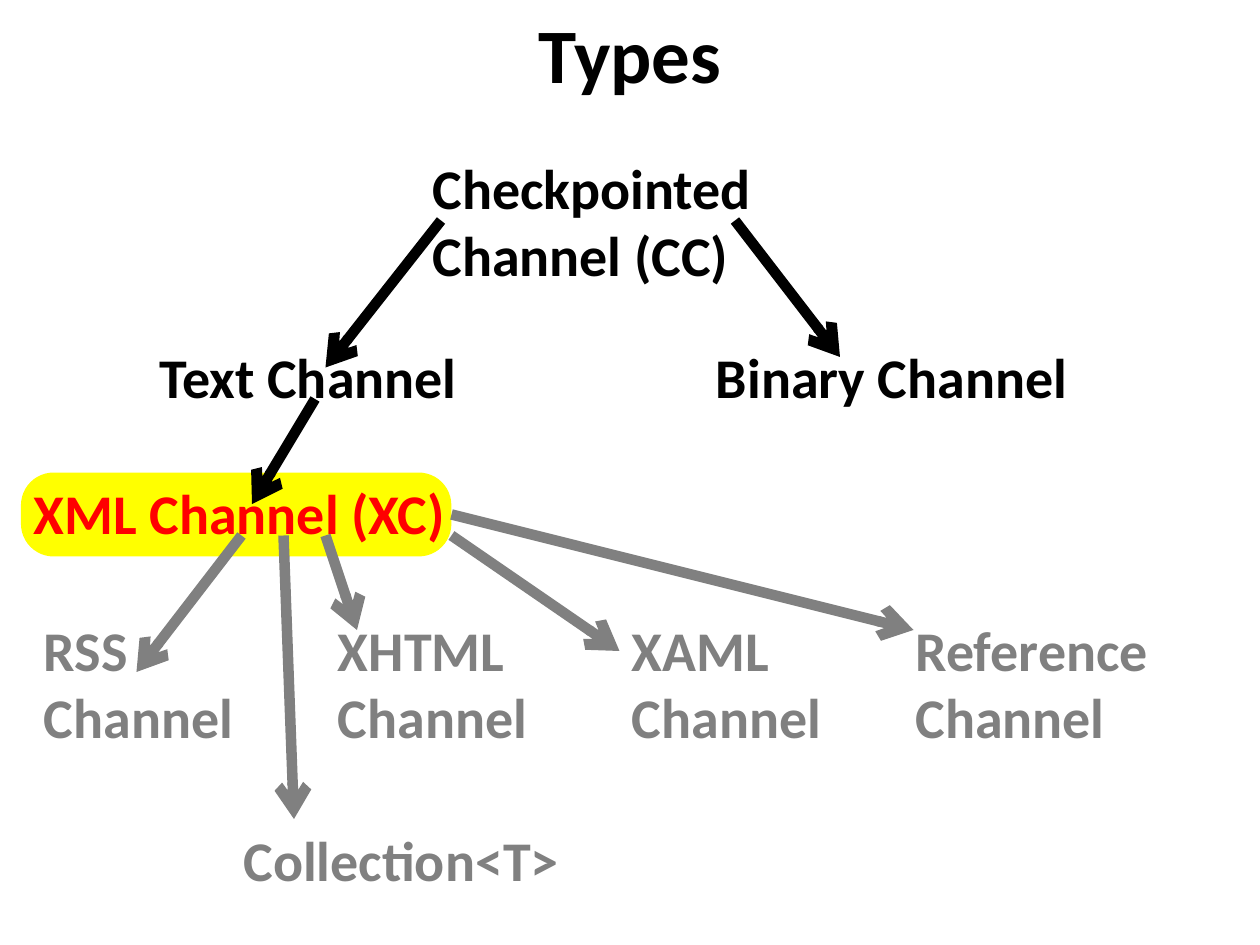
from lxml import etree
from pptx import Presentation
from pptx.dml.color import RGBColor
from pptx.enum.shapes import MSO_CONNECTOR, MSO_SHAPE
from pptx.enum.text import MSO_ANCHOR, MSO_AUTO_SIZE, PP_ALIGN
from pptx.oxml.ns import qn
from pptx.util import Pt

LINE = MSO_CONNECTOR.STRAIGHT
ROUND = MSO_SHAPE.ROUNDED_RECTANGLE
TOP = MSO_ANCHOR.TOP
FIXED = MSO_AUTO_SIZE.NONE
LEFT, CENTER = PP_ALIGN.LEFT, PP_ALIGN.CENTER

FONT = "Calibri"
BLACK, GRAY, RED, YELLOW = "000000", "808080", "FF0000", "FFFF00"
ROW = 48  # height of a one-line label

# Labels: text, left, top, width, height, relative to the tree
MAIN = [
    ("Checkpointed Channel (CC)", 240, 0, 198, 90),
    ("Text Channel", 84, 108, 198, ROW),
    ("Binary Channel", 402, 108, 234, ROW),
]
FOCUS = ("XML Channel (XC)", 12, 186, 264, ROW)
LEAVES = [
    ("RSS Channel", 18, 264, 126, ROW),
    ("XHTML Channel", 186, 264, 132, ROW),
    ("XAML Channel", 354, 264, 132, ROW),
    ("Reference Channel", 516, 264, 192, ROW),
    ("Collection<T>", 132, 384, 198, ROW),
]

# Arrows from parent to child: x1, y1, x2, y2, relative to the tree
MAIN_ARROWS = [
    (252, 42, 186, 126),
    (420, 42, 480, 120),
    (180, 144, 144, 204),
]
LEAF_ARROWS = [
    (138, 222, 78, 300),
    (186, 222, 204, 276),
    (258, 222, 354, 288),
    (258, 210, 522, 276),
    (162, 222, 168, 384),
]


def rgb(code):
    return RGBColor.from_string(code)


def write(shape, text, size, color, align=LEFT):
    frame = shape.text_frame
    frame.text = text
    frame.word_wrap = True
    frame.auto_size = FIXED
    frame.vertical_anchor = TOP
    for para in frame.paragraphs:
        para.alignment = align
        for run in para.runs:
            font = run.font
            font.name, font.size, font.bold = FONT, Pt(size), True
            font.color.rgb = rgb(color)


def add_title(slide, x, y, w, h):
    title = slide.shapes.title
    title.left, title.top, title.width, title.height = map(Pt, (x, y, w, h))
    write(title, "Types", 44, BLACK, CENTER)


def add_label(slide, x, y, item, color):
    text, dx, dy, w, h = item
    box = slide.shapes.add_textbox(Pt(x + dx), Pt(y + dy), Pt(w), Pt(h))
    write(box, text, 32, color)


def add_arrow(slide, x, y, ends, color):
    x1, y1, x2, y2 = ends
    arrow = slide.shapes.add_connector(
        LINE, Pt(x + x1), Pt(y + y1), Pt(x + x2), Pt(y + y2))
    arrow.line.width = Pt(6)
    arrow.line.color.rgb = rgb(color)
    props = arrow.line._get_or_add_ln()
    etree.SubElement(props, qn("a:tailEnd"), type="arrow")
    etree.SubElement(arrow._element.spPr, qn("a:effectLst"))


def add_tree(slide, x, y):
    # Highlight behind the XML channel
    _, dx, dy, w, h = FOCUS
    mark = slide.shapes.add_shape(
        ROUND, Pt(x + dx), Pt(y + dy), Pt(w - 18), Pt(h))
    mark.adjustments[0] = 0.39
    mark.shadow.inherit = False
    mark.fill.solid()
    mark.fill.fore_color.rgb = rgb(YELLOW)
    mark.line.fill.background()

    # Labels, then arrows on top
    for items, color in ((MAIN, BLACK), ([FOCUS], RED), (LEAVES, GRAY)):
        for item in items:
            add_label(slide, x, y, item, color)
    for arrows, color in ((MAIN_ARROWS, BLACK), (LEAF_ARROWS, GRAY)):
        for ends in arrows:
            add_arrow(slide, x, y, ends, color)


def main():
    deck = Presentation()
    deck.slide_width, deck.slide_height = Pt(720), Pt(540)
    slide = deck.slides.add_slide(deck.slide_layouts[5])
    add_title(slide, 0, 0, 720, 90)
    add_tree(slide, 0, 84)
    deck.save("out.pptx")


if __name__ == "__main__":
    main()
